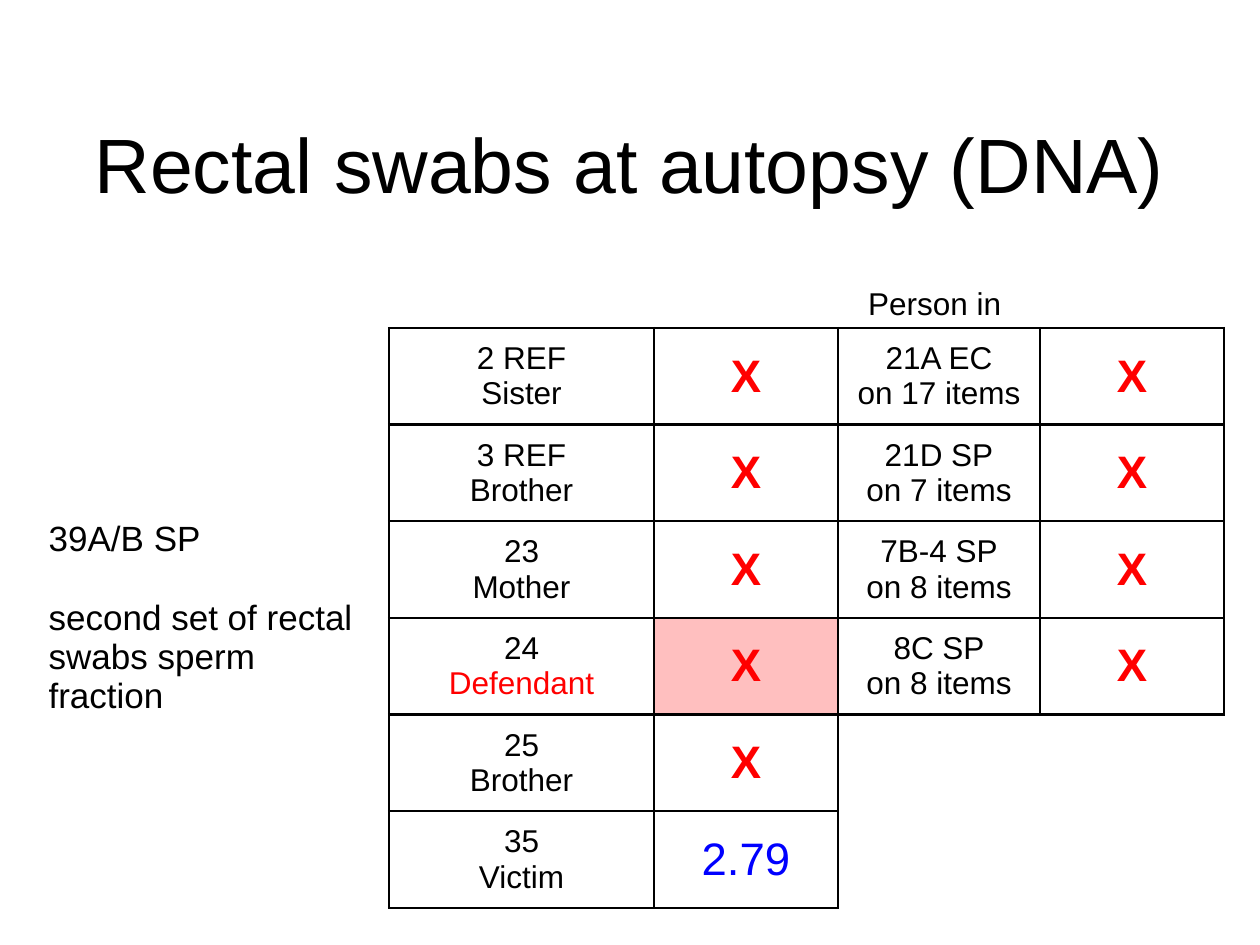
"""Build the slide with the table of DNA results for the rectal swabs."""
from lxml import etree
from pptx import Presentation
from pptx import util as u
from pptx.dml.color import RGBColor
from pptx.enum import text
from pptx.oxml import ns

SCALE = 914400 / 126
BLACK, RED, BLUE = "000000", "FF0000", "0000FF"
SMALL = {"name": "Arial", "size": u.Pt(18), "bold": False}
MARK = {"name": "Arial", "size": u.Pt(26), "bold": True}
VALUE = {**MARK, "bold": False}
NOTE = {**SMALL, "size": u.Pt(20)}
TITLE = {**SMALL, "size": u.Pt(44)}


def write(frame, lines, formats, color=BLACK, align=text.PP_ALIGN.CENTER):
    for index, line in enumerate(lines):
        paragraph = frame.paragraphs[0] if index == 0 else frame.add_paragraph()
        paragraph.alignment = align
        run = paragraph.add_run()
        run.text = line
        for name, value in formats.items():
            setattr(run.font, name, value)
        run.font.color.rgb = RGBColor.from_string(RED if line == "Defendant" else color)


def is_boxed(row, column):
    return 1 <= row <= 6 and 1 <= column <= 2 or 1 <= row <= 4 and 3 <= column <= 4


presentation = Presentation()
presentation.slide_width = int(1260 * SCALE)
presentation.slide_height = int(945 * SCALE)
slide = presentation.slides.add_slide(presentation.slide_layouts[5])

title = slide.shapes.title
title.left, title.top, title.width, title.height = [int(n * SCALE) for n in (6, 84, 1248, 158)]
title.text_frame.auto_size = text.MSO_AUTO_SIZE.NONE
title.text_frame.vertical_anchor = text.MSO_ANCHOR.MIDDLE
write(title.text_frame, ["Rectal swabs at autopsy (DNA)"], TITLE)

widths = [353, 265, 184, 202, 184]
heights = [60] + [580 / 6] * 6
box = [int(n * SCALE) for n in (36, 268, sum(widths), sum(heights))]
table = slide.shapes.add_table(len(heights), len(widths), *box).table
table.first_row = table.horz_banding = False
for column, width in zip(table.columns, widths):
    column.width = int(width * SCALE)
for row, height in zip(table.rows, heights):
    row.height = int(height * SCALE)

sides = {"lnL": (0, -1), "lnR": (0, 1), "lnT": (-1, 0), "lnB": (1, 0)}
for row in range(len(heights)):
    for column in range(len(widths)):
        cell = table.cell(row, column)
        cell.vertical_anchor = text.MSO_ANCHOR.MIDDLE
        properties = cell._tc.get_or_add_tcPr()
        for tag, (down, right) in sides.items():
            line = etree.SubElement(properties, ns.qn("a:" + tag), w=str(u.Pt(1.5)))
            if is_boxed(row, column) or is_boxed(row + down, column + right):
                fill = etree.SubElement(line, ns.qn("a:solidFill"))
                etree.SubElement(fill, ns.qn("a:srgbClr"), val=BLACK)
            else:
                etree.SubElement(line, ns.qn("a:noFill"))
        cell.fill.background()

header = table.cell(0, 3)
header.vertical_anchor = text.MSO_ANCHOR.BOTTOM
write(header.text_frame, ["Person in "], SMALL)

sample = table.cell(1, 0)
sample.merge(table.cell(6, 0))
sample_lines = ["39A/B SP", "second set of rectal swabs sperm fraction"]
write(sample.text_frame, sample_lines, NOTE, align=text.PP_ALIGN.LEFT)
sample.text_frame.paragraphs[1].space_before = u.Pt(22.5)

references = [("2 REF", "Sister"), ("3 REF", "Brother"), ("23", "Mother"),
              ("24", "Defendant"), ("25", "Brother"), ("35", "Victim")]
profiles = [("21A EC", "on 17 items"), ("21D SP", "on 7 items"),
            ("7B-4 SP", "on 8 items"), ("8C SP", "on 8 items")]
for column, labels in ((1, references), (3, profiles)):
    for row, label in enumerate(labels, 1):
        write(table.cell(row, column).text_frame, label, SMALL)
        result = table.cell(row, column + 1)
        if "Victim" in label:
            write(result.text_frame, ["2.79"], VALUE, BLUE)
        else:
            write(result.text_frame, ["X"], MARK, RED)
        if "Defendant" in label:
            result.fill.solid()
            result.fill.fore_color.rgb = RGBColor.from_string(RED)
            color = result._tc.tcPr.find(ns.qn("a:solidFill")).find(ns.qn("a:srgbClr"))
            etree.SubElement(color, ns.qn("a:alpha"), val="25000")

presentation.save("out.pptx")
